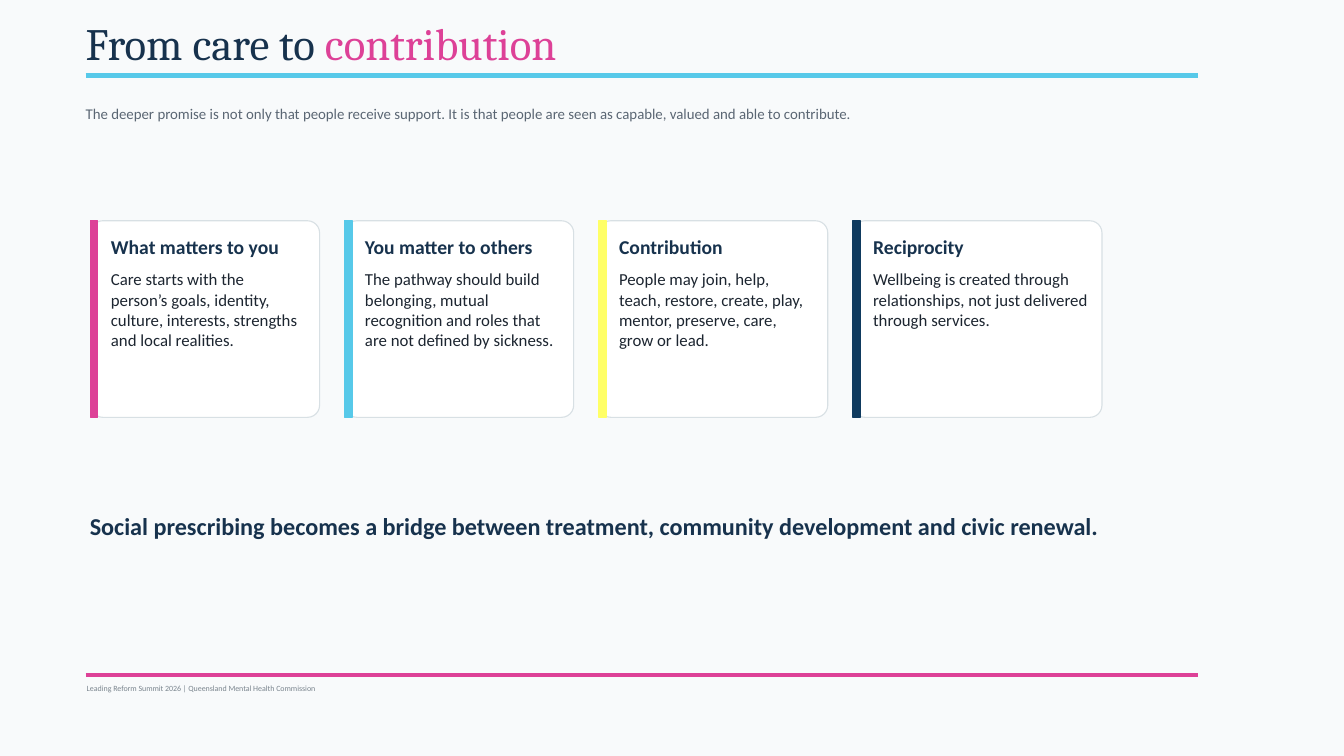
from lxml import etree
from pptx import Presentation
from pptx import util as u
from pptx.dml.color import RGBColor
from pptx.enum import shapes, text
from pptx.oxml import ns

PX = 9144
NAVY, PINK, SKY = "17324D", "DD4197", "57C9E9"
CARDS = [
    ("What matters to you", "Care starts with the person’s goals, identity, culture, interests, strengths and local realities.", PINK, 227, 191),
    ("You matter to others", "The pathway should build belonging, mutual recognition and roles that are not defined by sickness.", SKY, 227, 191),
    ("Contribution", "People may join, help, teach, restore, create, play, mentor, preserve, care, grow or lead.", "FFFF66", 227, 191),
    ("Reciprocity", "Wellbeing is created through relationships, not just delivered through services.", "0F3A5E", 247, 213),
]


def px(*nums):
    return [u.Emu(n * PX) for n in nums]


def rgb(code):
    return RGBColor.from_string(code)


def style(font, name, size, color, bold=False):
    font.name, font.size, font.bold = name, u.Pt(size), bold
    font.color.rgb = rgb(color)


def label(slide, box, words, size, color, bold=False, anchor=text.MSO_ANCHOR.MIDDLE, space=None):
    frame = slide.shapes.add_textbox(*px(*box)).text_frame
    frame.word_wrap = True
    frame.vertical_anchor = anchor
    frame.margin_left = frame.margin_top = frame.margin_right = frame.margin_bottom = 0
    para = frame.paragraphs[0]
    para.text = words
    para.line_spacing = space
    style(para.font, "Calibri", size, color, bold)


def block(slide, kind, box, fill, line, width):
    shape = slide.shapes.add_shape(kind, *px(*box))
    shape.shadow.inherit = False
    shape.fill.solid()
    shape.fill.fore_color.rgb = rgb(fill)
    shape.line.color.rgb = rgb(line)
    shape.line.width = u.Pt(width)
    return shape


def rule(slide, y, color):
    line = slide.shapes.add_connector(shapes.MSO_CONNECTOR.STRAIGHT, *px(85, y, 1188, y))
    line.line.color.rgb = rgb(color)
    line.line.width = u.Pt(3)
    etree.SubElement(line._element.spPr, ns.qn("a:effectLst"))


def card(slide, x, head, body, color, width, wrap):
    top, high = 219, 195
    kind = shapes.MSO_SHAPE
    panel = block(slide, kind.ROUNDED_RECTANGLE, (x, top, width, high), "FFFFFF", "D8E0E4", 0.8)
    panel.adjustments[0] = 12 / high
    block(slide, kind.RECTANGLE, (x, top, 7, high), color, color, 1)
    label(slide, (x + 20, 232, 195, 26), head, 14, NAVY, True)
    label(slide, (x + 20, 267, wrap, 136), body, 12, "1C2530", anchor=text.MSO_ANCHOR.TOP)


def heading(slide):
    title = slide.shapes.title
    title.left, title.top, title.width, title.height = px(75, 17, 1062, 53)
    frame = title.text_frame
    frame.auto_size = text.MSO_AUTO_SIZE.NONE
    frame.vertical_anchor = text.MSO_ANCHOR.TOP
    para = frame.paragraphs[0]
    para.alignment = text.PP_ALIGN.LEFT
    para.line_spacing = 0.9
    for words, color in (("From care to ", NAVY), ("contribution", PINK)):
        run = para.add_run()
        run.text = words
        style(run.font, "Cambria", 32, color)


def main():
    deck = Presentation()
    deck.slide_width, deck.slide_height = px(1333, 750)
    slide = deck.slides.add_slide(deck.slide_layouts[5])
    back = slide.background.fill
    back.solid()
    back.fore_color.rgb = rgb("F8FAFB")
    rule(slide, 75, SKY)
    rule(slide, 670, PINK)
    heading(slide)
    label(slide, (85, 98, 1019, 29), "The deeper promise is not only that people receive support. It is that people are seen as capable, valued and able to contribute.", 10.6, "5A6673")
    for i, item in enumerate(CARDS):
        card(slide, 90 + 252 * i, *item)
    label(slide, (89, 497, 1019, 53), "Social prescribing becomes a bridge between treatment, community development and civic renewal.", 17.3, NAVY, True, space=0.9)
    label(slide, (86, 675, 650, 16), "Leading Reform Summit 2026 | Queensland Mental Health Commission", 5.7, "7A858E")
    deck.save("out.pptx")


if __name__ == "__main__":
    main()
